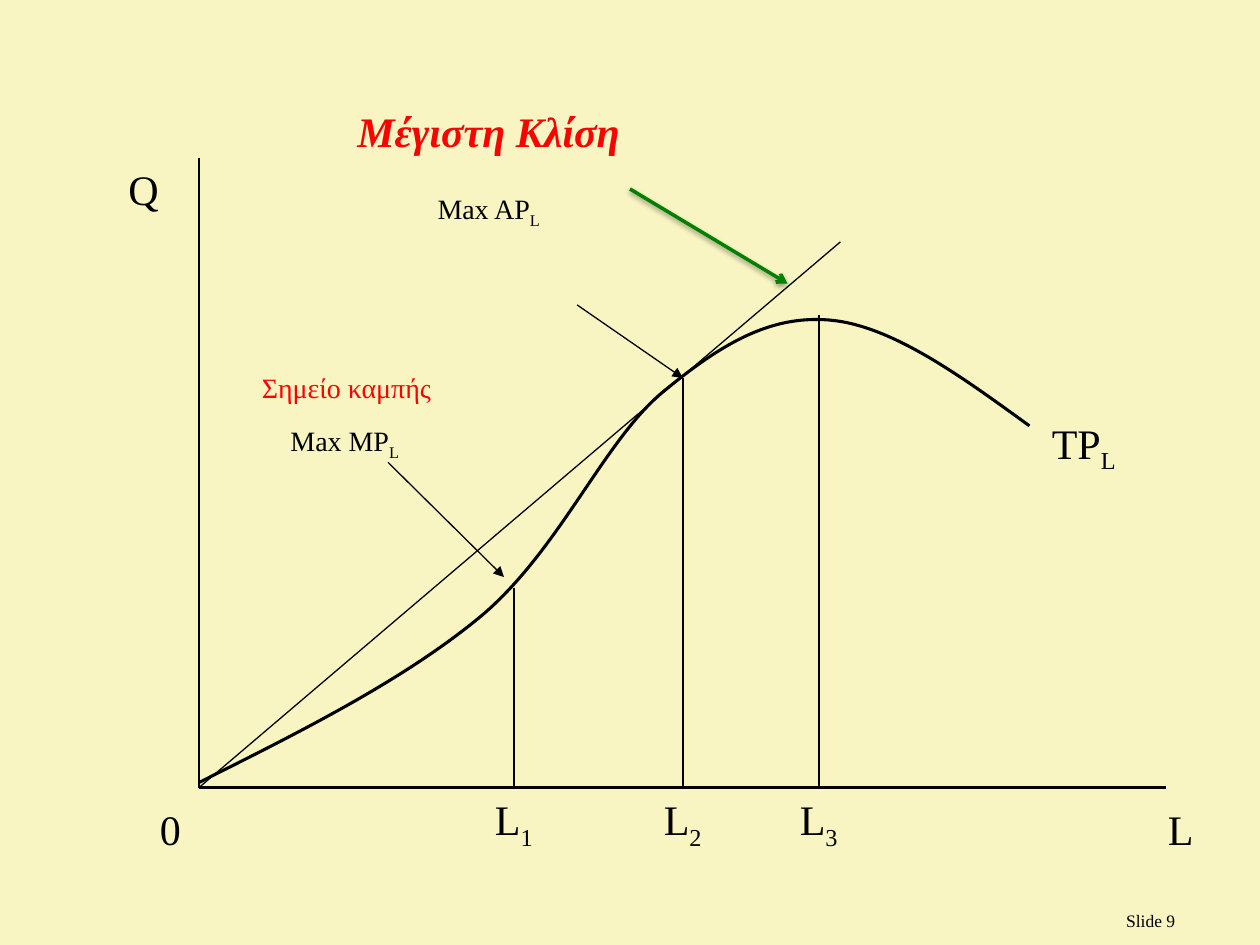
from dataclasses import dataclass
from lxml import etree
from pptx import Presentation
from pptx import util as u
from pptx.dml.color import RGBColor
from pptx.enum import shapes, text
from pptx.oxml import ns


@dataclass(frozen=True)
class Theme:
    font: str = "Times New Roman"
    paper: str = "F8F5C2"
    ink: str = "000000"
    red: str = "FF0000"
    green: str = "008000"
    big: int = 24
    mid: int = 16
    small: int = 10
    thin: float = 0.75
    axis: float = 1.5
    curve: float = 1.75
    bold: float = 2


T = Theme()
LEFT, BASE = 1.58, 6.25
CENTER = text.PP_ALIGN.CENTER


def color(code):
    return RGBColor.from_string(code)


def child(node, tag, **attrs):
    return etree.SubElement(node, ns.qn(tag), attrs)


def add_run(para, words, size=T.big, tint=T.ink, sub=False, strong=False):
    run = para.add_run()
    run.text = words
    font = run.font
    font.name, font.size = T.font, u.Pt(size)
    font.color.rgb = color(tint)
    if strong:
        font.bold = font.italic = True
    if sub:
        run._r.get_or_add_rPr().set("baseline", "-25000")


def add_box(slide, left, top, width, height, align=None):
    box = slide.shapes.add_textbox(*map(u.Inches, (left, top, width, height)))
    frame = box.text_frame
    frame.word_wrap = True
    frame.auto_size = text.MSO_AUTO_SIZE.SHAPE_TO_FIT_TEXT
    frame.paragraphs[0].alignment = align
    return frame


def add_label(slide, left, top, width, height, words, sub="", size=T.big):
    frame = add_box(slide, left, top, width, height)
    add_run(frame.paragraphs[0], words, size)
    if sub:
        add_run(frame.paragraphs[0], sub, size, sub=True)
    return frame


def add_line(slide, start, end, width=T.thin, tint=T.ink, head=None):
    line = slide.shapes.add_connector(
        shapes.MSO_CONNECTOR.STRAIGHT, *map(u.Inches, (*start, *end)))
    line.line.width = u.Pt(width)
    line.line.color.rgb = color(tint)
    if head:
        child(line.line._get_or_add_ln(), "a:tailEnd", type=head)
    return child(line._element.spPr, "a:effectLst")


def add_glow(effects):
    cast = child(effects, "a:outerShdw", blurRad=str(u.Pt(3.1)),
                 dist=str(u.Pt(1.6)), dir="5400000", rotWithShape="0")
    tint = child(cast, "a:srgbClr", val=T.ink)
    child(tint, "a:alpha", val="38000")


def add_curve(slide, points):
    start, *rest = [(u.Inches(x), u.Inches(y)) for x, y in points]
    pen = slide.shapes.build_freeform(*start)
    pen.add_line_segments(rest, close=False)
    curve = pen.convert_to_shape()
    curve.shadow.inherit = False
    curve.fill.background()
    curve.line.width = u.Pt(T.curve)
    curve.line.color.rgb = color(T.ink)
    steps = list(curve._element.iter(ns.qn("a:lnTo")))
    for i in range(0, len(steps), 3):
        bend = etree.Element(ns.qn("a:cubicBezTo"))
        steps[i].addprevious(bend)
        for step in steps[i:i + 3]:
            bend.append(step[0])
            step.getparent().remove(step)


def add_notes(slide):
    frame = add_box(slide, 2.42, 0.79, 3, 1.14, CENTER)
    add_run(frame.paragraphs[0], "Μέγιστη Κλίση ", tint=T.red, strong=True)
    para = frame.add_paragraph()
    para.alignment = CENTER
    para.space_before = u.Pt(T.big / 2)
    add_run(para, "Max AP", T.mid)
    add_run(para, "L", T.mid, sub=True)
    add_run(para, " ")

    para = add_box(slide, 1.75, 2.76, 2, 0.91, CENTER).paragraphs[0]
    para.line_spacing = 1.5
    add_run(para, "Σημείο καμπής ", T.mid, T.red)
    add_run(para, "Max MP", T.mid)
    add_run(para, "L ", T.mid, sub=True)


def main():
    deck = Presentation()
    deck.slide_width, deck.slide_height = u.Inches(10), u.Inches(7.5)
    slide = deck.slides.add_slide(deck.slide_layouts[6])
    slide.background.fill.solid()
    slide.background.fill.fore_color.rgb = color(T.paper)

    add_label(slide, 8.84, 7.17, 1.16, 0.27, "Slide 9", size=T.small)
    origin = (LEFT, BASE)
    add_line(slide, (LEFT, 1.25), origin, T.axis)
    add_line(slide, origin, (9.25, BASE), T.axis)
    add_curve(slide, [
        (LEFT, 6.21), (2.4, 5.8), (3.22, 5.39), (3.83, 4.88),
        (4.44, 4.36), (4.79, 3.51), (5.25, 3.12),
        (5.71, 2.74), (6.1, 2.5), (6.58, 2.54),
        (7.07, 2.58), (7.62, 2.98), (8.17, 3.38)])
    add_line(slide, origin, (6.67, 1.92))

    for words, left, top in (("L", 9.17, 6.33), ("Q", 0.92, 1.25), ("0", 1.17, 6.33)):
        add_label(slide, left, top, 0.5, 0.5, words)
    total = add_label(slide, 8.25, 3.29, 0.83, 0.5, "TP", "L")
    total.vertical_anchor = text.MSO_ANCHOR.MIDDLE

    drops = ((4.08, 4.67, 3.83), (5.42, 3, 5.17), (6.5, 2.5, 6.25))
    for index, (x, top, left) in enumerate(drops, 1):
        add_line(slide, (x, top), (x, BASE))
        add_label(slide, left, BASE, 0.5, 0.77, "L", str(index))

    add_notes(slide)
    add_line(slide, (4.58, 2.42), (5.42, 3), head="triangle")
    add_line(slide, (3.08, 3.67), (4, 4.58), head="triangle")
    add_glow(add_line(slide, (5, 1.5), (6.25, 2.25), T.bold, T.green, "arrow"))
    deck.save("out.pptx")


if __name__ == "__main__":
    main()
